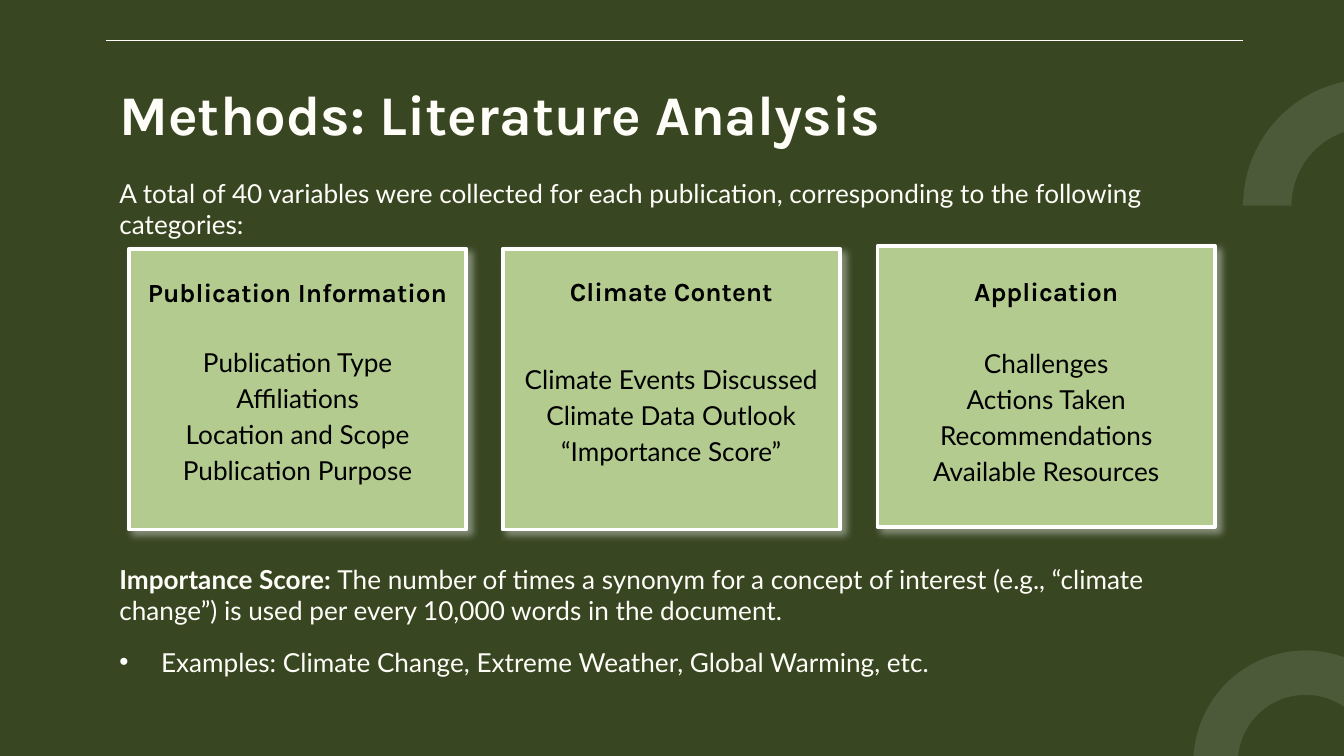
from math import cos, pi, sin

from lxml.etree import SubElement
from pptx import Presentation
from pptx.dml.color import RGBColor
from pptx.enum.shapes import MSO_CONNECTOR, MSO_SHAPE
from pptx.enum.text import MSO_ANCHOR, PP_ALIGN
from pptx.oxml.ns import qn
from pptx.util import Inches, Pt

MOSS = RGBColor(0x38, 0x46, 0x22)
SAGE = RGBColor(0xB3, 0xCB, 0x8F)
CREAM = RGBColor(0xFF, 0xFD, 0xF8)
WHITE = RGBColor(0xFF, 0xFF, 0xFF)
BLACK = RGBColor(0, 0, 0)
HEAD, BODY = "Karla", "Lato"
WIDE = 2.51

CARDS = [
    (0.96, 1.85, 1.91, 2.44, "Publication Information",
     ["Publication Type", "Affiliations", "Location and Scope", "Publication Purpose"]),
    (3.74, 1.85, 1.9, 2.57, "Climate Content",
     ["Climate Events Discussed", "Climate Data Outlook", "“Importance Score”"]),
    (6.53, 1.83, 1.9, 2.45, "Application",
     ["Challenges", "Actions Taken", "Recommendations", "Available Resources"]),
]


class Deck:
    """Holds the style and the current slide, and draws each kind of element."""

    def __init__(self):
        self.show = Presentation()
        self.show.slide_width = Inches(10)
        self.show.slide_height = Inches(10) * 9 // 16
        self.slide = self.show.slides.add_slide(self.show.slide_layouts[6])
        self.shapes = self.slide.shapes
        fill = self.slide.background.fill
        fill.solid()
        fill.fore_color.rgb = MOSS

    def paint(self, shape, color):
        shape.shadow.inherit = False
        shape.fill.solid()
        shape.fill.fore_color.rgb = color
        shape.line.fill.background()

    def fade(self, shape):
        self.paint(shape, WHITE)
        color = shape.fill._xPr.find(qn("a:solidFill"))[0]
        SubElement(color, qn("a:alpha"), val="11000")

    def ring(self, x, y, size, band):
        shape = self.shapes.add_shape(
            MSO_SHAPE.DONUT, Inches(x), Inches(y), Inches(size), Inches(size))
        shape.adjustments[0] = band / size
        self.fade(shape)

    def arc(self, x, y, outer, inner, steps=40):
        turns = [pi / 2 * i / steps for i in range(steps + 1)]
        dots = [(x - outer * cos(t), y - outer * sin(t)) for t in turns]
        dots += [(x - inner * cos(t), y - inner * sin(t)) for t in reversed(turns)]
        dots = [(Inches(a), Inches(b)) for a, b in dots]
        form = self.shapes.build_freeform(*dots[0])
        form.add_line_segments(dots[1:], close=True)
        self.fade(form.convert_to_shape())

    def rule(self, x, y, end):
        line = self.shapes.add_connector(
            MSO_CONNECTOR.STRAIGHT, Inches(x), Inches(y), Inches(end), Inches(y))
        line.line.color.rgb = CREAM
        line.line.width = Pt(0.75)
        SubElement(line._element.spPr, qn("a:effectLst"))

    def card(self, x, y):
        shape = self.shapes.add_shape(
            MSO_SHAPE.RECTANGLE, Inches(x), Inches(y), Inches(WIDE), Inches(2.09))
        self.paint(shape, SAGE)
        shape.line.color.rgb = WHITE
        shape.line.width = Pt(2)
        glow = SubElement(
            shape._element.spPr.find(qn("a:effectLst")), qn("a:outerShdw"),
            blurRad=str(Pt(4)), dist=str(Pt(3)), dir="2700000", algn="tl", rotWithShape="0")
        color = SubElement(glow, qn("a:srgbClr"), val=str(WHITE))
        SubElement(color, qn("a:alpha"), val="40000")

    def text(self, x, y, w, h, lines, size=14, font=BODY, color=CREAM, bold=None,
             align=PP_ALIGN.LEFT, space=None, anchor=MSO_ANCHOR.TOP, pad=0.1):
        frame = self.shapes.add_textbox(
            Inches(x), Inches(y), Inches(w), Inches(h)).text_frame
        frame.word_wrap = True
        frame.vertical_anchor = anchor
        frame.margin_left = frame.margin_right = Inches(0.1)
        frame.margin_top = frame.margin_bottom = Inches(pad)
        for i, line in enumerate(lines):
            para = frame.add_paragraph() if i else frame.paragraphs[0]
            para.text = line
            para.alignment = align
            para.line_spacing = space
            para.font.size = Pt(size)
            para.font.name = font
            para.font.color.rgb = color
            para.font.bold = bold
        return frame.paragraphs

    def bullet(self, para, gap):
        para.space_before = Pt(gap)
        props = para._p.get_or_add_pPr()
        props.set("marL", str(Inches(0.31)))
        props.set("indent", str(-Inches(0.31)))
        tint = props.makeelement(qn("a:buClr"))
        SubElement(tint, qn("a:srgbClr"), val=str(WHITE))
        face = props.makeelement(qn("a:buFont"), {"typeface": "Arial"})
        mark = props.makeelement(qn("a:buChar"), {"char": "•"})
        rest = props.find(qn("a:defRPr"))
        for part in (tint, face, mark):
            rest.addprevious(part)


def main():
    deck = Deck()
    deck.ring(8.88, 4.84, 1.67, 0.33)
    deck.arc(10.19, 1.53, 0.94, 0.58)
    deck.rule(0.79, 0.3, 9.25)
    for x, top, *_ in reversed(CARDS):
        deck.card(x, top)
    deck.text(0.79, 0.49, 8.43, 0.63, ["Methods: Literature Analysis"],
              size=30, font=HEAD, bold=True)
    style = dict(color=BLACK, align=PP_ALIGN.CENTER, space=1.15)
    for x, _, head, body, title, items in CARDS:
        deck.text(x, body, WIDE, 1.25 if len(items) > 3 else 0.98, items, **style)
        deck.text(x, head, WIDE, 0.48, [title], font=HEAD, bold=True,
                  anchor=MSO_ANCHOR.BOTTOM, **style)
    deck.text(0.79, 1.27, 8.43, 0.34, [
        "A total of 40 variables were collected for each publication, "
        "corresponding to the following categories:"], pad=0.05)
    score, cases = deck.text(0.79, 4.14, 8.43, 0.99, [
        "Importance Score: ",
        "Examples: Climate Change, Extreme Weather, Global Warming, etc."], pad=0.05)
    score.runs[0].font.bold = True
    score.add_run().text = (
        "The number of times a synonym for a concept of interest (e.g., “climate "
        "change”) is used per every 10,000 words in the document.")
    deck.bullet(cases, 10.8)
    deck.show.save("out.pptx")


if __name__ == "__main__":
    main()
